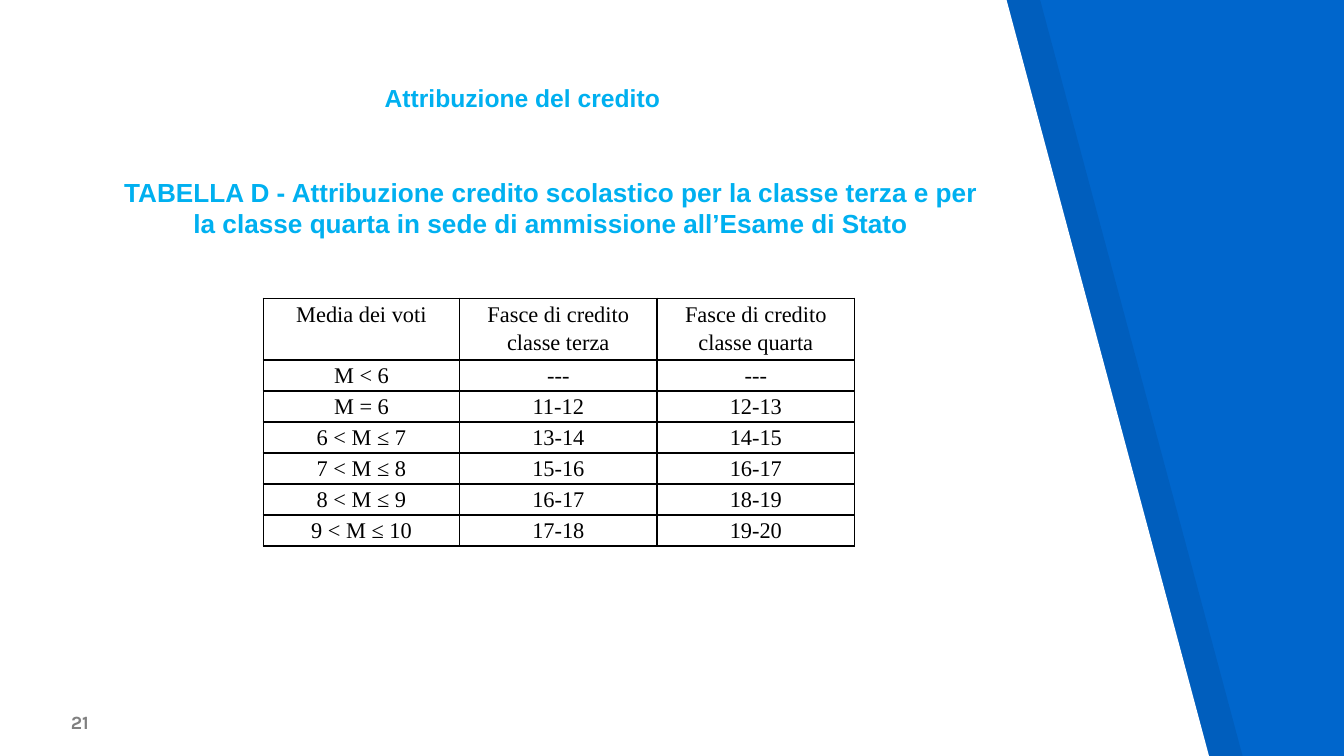
from lxml import etree
from pptx import Presentation
from pptx.enum import text
from pptx.dml.color import RGBColor
from pptx.oxml import ns
from pptx.util import Inches, Pt

COLORS = {"blue": "0066CC", "shade": "000000", "white": "FFFFFF",
          "heading": "00B0F0", "number": "808080", "ink": "000000"}
CENTER = text.PP_ALIGN.CENTER


def style(paragraph, font_name, size, color, bold=False, align=None):
    paragraph.alignment = align
    paragraph.font.name = font_name
    paragraph.font.size = Pt(size)
    paragraph.font.bold = bold
    paragraph.font.color.rgb = RGBColor.from_string(COLORS[color])


def add_border(cell):
    """Give all four sides of a table cell a 1 pt line."""
    properties = cell._tc.get_or_add_tcPr()
    for position, side in enumerate(("lnL", "lnR", "lnT", "lnB")):
        line = etree.Element(ns.qn(f"a:{side}"), w=str(Pt(1)))
        fill = etree.SubElement(line, ns.qn("a:solidFill"))
        etree.SubElement(fill, ns.qn("a:srgbClr"), val=COLORS["ink"])
        properties.insert(position, line)


deck = Presentation()
deck.slide_width = Inches(10)
deck.slide_height = deck.slide_width * 9 // 16
page = deck.slides.add_slide(deck.slide_layouts[6])
page.background.fill.solid()
page.background.fill.fore_color.rgb = RGBColor.from_string(COLORS["blue"])

# Slanted white panel over its translucent shade
for left, color, opacity in ((0.25, "shade", 7), (0, "white", 100)):
    builder = page.shapes.build_freeform(Inches(left), Inches(-0.01))
    builder.add_line_segments([(Inches(left + x), Inches(y)) for x, y in
                               ((0, 5.64), (9, 5.64), (7.49, 0))])
    panel = builder.convert_to_shape()
    panel.shadow.inherit = False
    panel.line.fill.background()
    panel.fill.solid()
    panel.fill.fore_color.rgb = RGBColor.from_string(COLORS[color])
    if opacity < 100:
        tint = panel._element.spPr.find(".//" + ns.qn("a:srgbClr"))
        etree.SubElement(tint, ns.qn("a:alpha"), val=str(opacity * 1000))

TOP, BOTTOM = text.MSO_ANCHOR.TOP, text.MSO_ANCHOR.BOTTOM
FIXED, GROW = text.MSO_AUTO_SIZE.NONE, text.MSO_AUTO_SIZE.SHAPE_TO_FIT_TEXT
texts = [
    ("21", (0.43, 5.17, 0.37, 0.37), "Karla", 10, "number", None, BOTTOM, GROW),
    ("Attribuzione del credito", (0.54, 0.52, 6.69, 0.68),
     "Arial", 13.2, "heading", CENTER, TOP, FIXED),
    ("TABELLA D - Attribuzione credito scolastico per la classe terza e per "
     "la classe quarta in sede di ammissione all’Esame di Stato",
     (0.72, 1.21, 6.76, 3.69), "Arial", 14, "heading", CENTER, TOP, FIXED),
]
for words, place, font_name, size, color, align, anchor, fit in texts:
    frame = page.shapes.add_textbox(*map(Inches, place)).text_frame
    frame.auto_size = fit
    frame.word_wrap = fit == FIXED
    frame.vertical_anchor = anchor
    frame.margin_left = frame.margin_right = Inches(0.1)
    frame.margin_top = frame.margin_bottom = Inches(0.1)
    frame.text = words
    style(frame.paragraphs[0], font_name, size, color, True, align)

credit_rows = [
    ("Media dei voti", "Fasce di credito classe terza", "Fasce di credito classe quarta"),
    ("M < 6", "---", "---"),
    ("M = 6", "11-12", "12-13"),
    ("6 < M ≤ 7", "13-14", "14-15"),
    ("7 < M ≤ 8", "15-16", "16-17"),
    ("8 < M ≤ 9", "16-17", "18-19"),
    ("9 < M ≤ 10", "17-18", "19-20"),
]
table_frame = page.shapes.add_table(len(credit_rows), 3, Inches(1.96), Inches(2.22),
                                    Inches(4.4), Inches(0.42))
table = table_frame.table
table.first_row = table.horz_banding = False
for column, width in zip(table.columns, (1.46, 1.47, 1.47)):
    column.width = Inches(width)
for row_index, values in enumerate(credit_rows):
    table.rows[row_index].height = Inches(0.06)
    for column_index, value in enumerate(values):
        cell = table.cell(row_index, column_index)
        cell.margin_left = cell.margin_right = 0
        cell.margin_top = cell.margin_bottom = 0
        cell.fill.background()
        add_border(cell)
        cell.text = value
        paragraph = cell.text_frame.paragraphs[0]
        paragraph.line_spacing = 1.15
        style(paragraph, "Times New Roman", 12, "ink", align=CENTER)
table_frame.height = 0  # rows grow to fit their text

deck.save("out.pptx")
